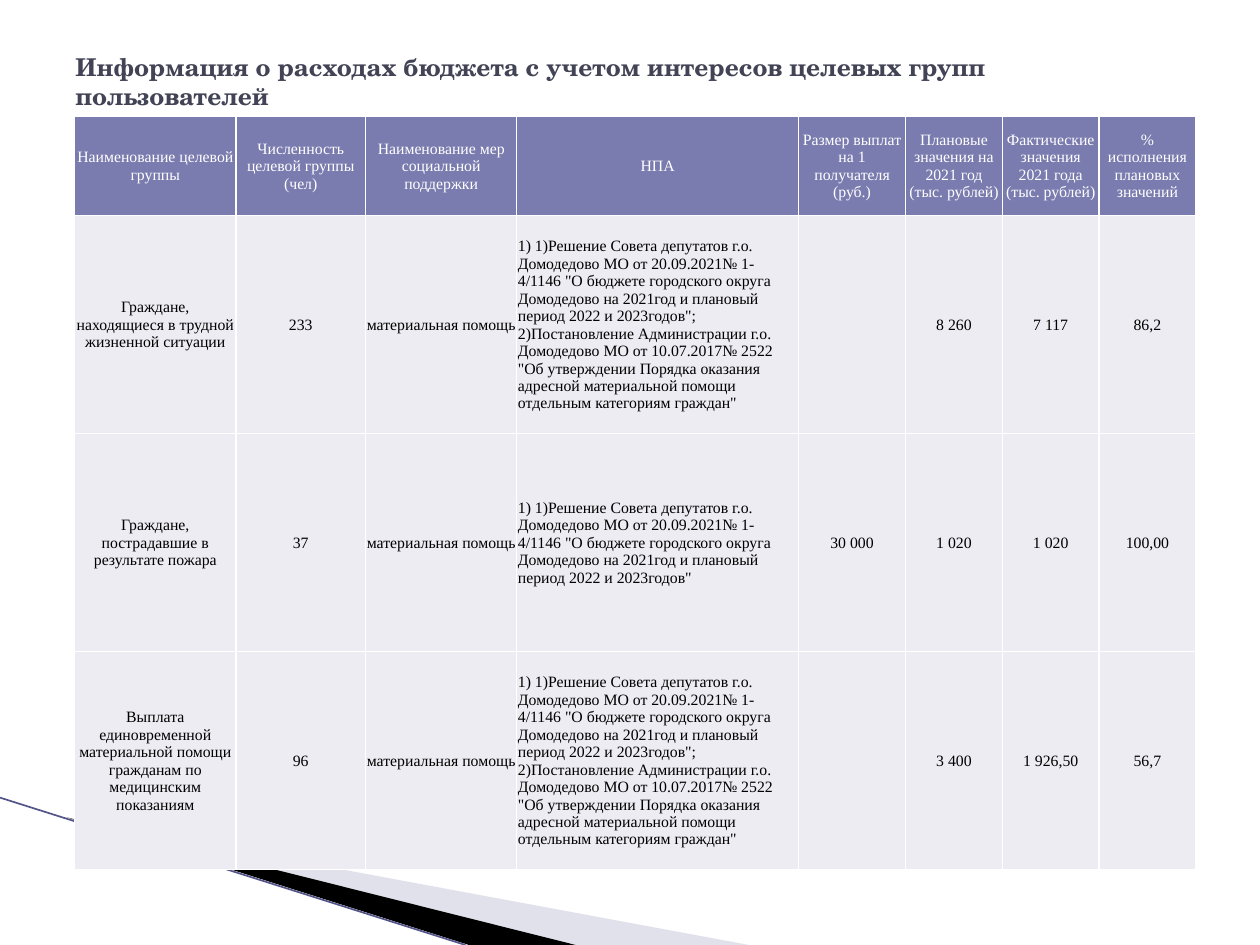
import pptx
import pptx.dml.color
import pptx.enum.shapes
import pptx.enum.text
import pptx.oxml
import pptx.oxml.ns
import pptx.util

Pt = pptx.util.Pt
ALIGN = pptx.enum.text.PP_ALIGN
MIDDLE = pptx.enum.text.MSO_ANCHOR.MIDDLE

# Content
TITLE = "Информация о расходах бюджета с учетом интересов целевых групп пользователей"
HEADER = [
    "Наименование целевой группы", "Численность целевой группы (чел)",
    "Наименование мер социальной поддержки", "НПА",
    "Размер выплат на 1 получателя (руб.)",
    "Плановые значения на 2021 год (тыс. рублей)",
    "Фактические значения 2021 года (тыс. рублей)",
    "% исполнения плановых значений",
]
AID = "материальная помощь"
BUDGET_ACT = ('1) 1)Решение Совета депутатов г.о. Домодедово МО от 20.09.2021№ 1-4/1146 '
              '"О бюджете городского округа Домодедово на 2021год и плановый период '
              '2022 и 2023годов"')
BOTH_ACTS = BUDGET_ACT + ('; 2)Постановление Администрации г.о. Домодедово МО от 10.07.2017№ 2522 '
                          '"Об утверждении Порядка оказания адресной материальной помощи '
                          'отдельным категориям граждан"')
ROWS = [
    HEADER,
    ["Граждане, находящиеся в трудной жизненной ситуации", "233", AID, BOTH_ACTS,
     "", "8 260", "7 117", "86,2"],
    ["Граждане, пострадавшие в результате пожара", "37", AID, BUDGET_ACT,
     "30 000", "1 020", "1 020", "100,00"],
    ["Выплата единовременной материальной помощи гражданам по медицинским показаниям",
     "96", AID, BOTH_ACTS, "", "3 400", "1 926,50", "56,7"],
]

# Layout and formats
TABLE_LEFT, TABLE_TOP = 42.6, 66.2
COL_WIDTHS = [92.2, 74.1, 86.4, 161, 61.2, 55.3, 55.3, 55.3]
ROW_HEIGHTS = [56.9] + [124.6] * 3
ACTS_COL = 3
CELL_FORMAT = {"margin_left": Pt(0.7), "margin_right": Pt(0.7), "margin_top": Pt(0.7),
               "margin_bottom": 0, "vertical_anchor": MIDDLE}
TITLE_FONT = {"name": "TeX Gyre Schola", "size": Pt(14), "bold": True}
CELL_FONT = {"name": "Times New Roman", "size": Pt(9), "bold": False}
WEDGES = [  # points, colour, opacity in percent
    ([(39.6, 468.5), (428, 540), (328.3, 540)], "B6B6D1", 40),
    ([(38.2, 467.3), (329, 540), (268, 540)], "000000", 100),
]


def rgb(color):
    return pptx.dml.color.RGBColor.from_string(color)


def apply(obj, values):
    for name, value in values.items():
        setattr(obj, name, value)


def write(p, text, font, color, align):
    p.alignment = align
    r = p.add_run()
    r.text = text
    apply(r.font, font)
    r.font.color.rgb = rgb(color)


def add_borders(cell, color, width):
    tc_pr = cell._tc.get_or_add_tcPr()
    for side in ("lnL", "lnR", "lnT", "lnB"):
        tc_pr.append(pptx.oxml.parse_xml(
            f'<a:{side} {pptx.oxml.ns.nsdecls("a")} w="{Pt(width)}"><a:solidFill>'
            f'<a:srgbClr val="{color}"/></a:solidFill></a:{side}>'))


def add_wedge(s, points, color, opacity):
    builder = s.shapes.build_freeform(*points[0], scale=Pt(1))
    builder.add_line_segments(points[1:], close=True)
    sp = builder.convert_to_shape()
    sp.shadow.inherit = False
    sp.line.fill.background()
    sp.fill.solid()
    sp.fill.fore_color.rgb = rgb(color)
    if opacity < 100:
        clr = sp._element.spPr.find(".//" + pptx.oxml.ns.qn("a:srgbClr"))
        clr.append(pptx.oxml.parse_xml(
            f'<a:alpha {pptx.oxml.ns.nsdecls("a")} val="{opacity * 1000}"/>'))


def main():
    prs = pptx.Presentation()
    prs.slide_width, prs.slide_height = Pt(720), Pt(540)
    s = prs.slides.add_slide(prs.slide_layouts[6])

    # Corner decoration
    for wedge in WEDGES:
        add_wedge(s, *wedge)
    line = s.shapes.add_connector(pptx.enum.shapes.MSO_CONNECTOR.STRAIGHT,
                                  Pt(0), Pt(455.8), Pt(266), Pt(540))
    line.line.color.rgb = rgb("53548A")
    line.line.width = Pt(0.95)
    line._element.spPr.append(pptx.oxml.parse_xml(
        f'<a:effectLst {pptx.oxml.ns.nsdecls("a")}/>'))

    # Title
    tf = s.shapes.add_textbox(Pt(36), Pt(21.6), Pt(648), Pt(49.7)).text_frame
    apply(tf, {"word_wrap": True, "vertical_anchor": MIDDLE})
    write(tf.paragraphs[0], TITLE, TITLE_FONT, "424456", ALIGN.LEFT)

    # Table
    table = s.shapes.add_table(len(ROWS), len(HEADER), Pt(TABLE_LEFT), Pt(TABLE_TOP),
                               Pt(sum(COL_WIDTHS)), Pt(sum(ROW_HEIGHTS))).table
    for col, width in zip(table.columns, COL_WIDTHS):
        col.width = Pt(width)
    for row, height in zip(table.rows, ROW_HEIGHTS):
        row.height = Pt(height)
    for i, texts in enumerate(ROWS):
        fill, color = ("7A7BAE", "FFFFFF") if i == 0 else ("ECECF2", "000000")
        for j, text in enumerate(texts):
            cell = table.cell(i, j)
            apply(cell, CELL_FORMAT)
            add_borders(cell, "FFFFFF", 1)
            cell.fill.solid()
            cell.fill.fore_color.rgb = rgb(fill)
            if text:
                align = ALIGN.LEFT if i and j == ACTS_COL else ALIGN.CENTER
                write(cell.text_frame.paragraphs[0], text, CELL_FONT, color, align)

    prs.save("out.pptx")


if __name__ == "__main__":
    main()
